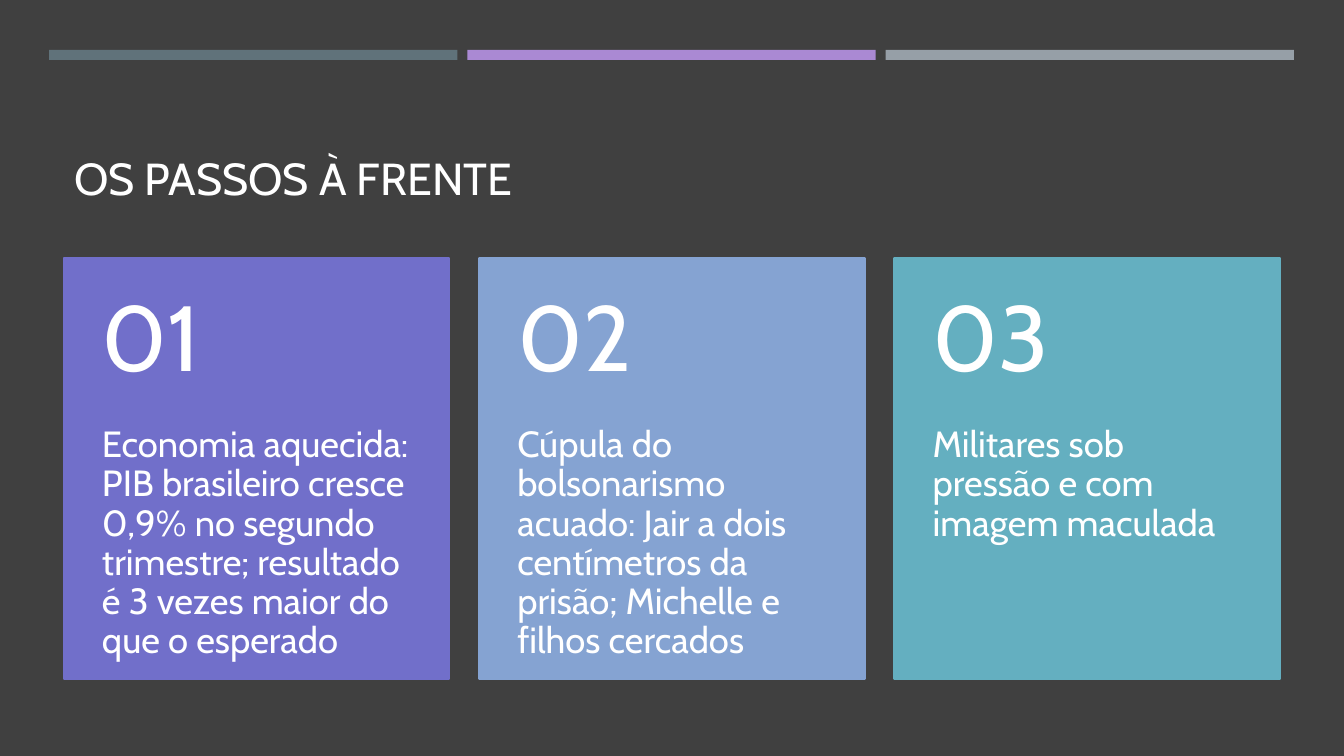
from dataclasses import dataclass

from pptx import Presentation
from pptx.dml.color import RGBColor
from pptx.enum import shapes, text
from pptx.util import Pt

EMU_PER_PX = 9144000 / 1008
SLIDE_W, SLIDE_H = 1344, 756


@dataclass(frozen=True)
class Theme:
    font: str = "Cabin"
    base: str = "000000"
    backdrop: str = "404040"
    ink: str = "FFFFFF"
    bars: tuple = ("60727A", "AA89D3", "969FA7")
    cards: tuple = ("716FCA", "85A3D2", "64AFC0")
    title_pt: int = 32
    number_pt: int = 66
    body_pt: int = 26
    outline_pt: float = 1.75


THEME = Theme()
TITLE = "OS PASSOS À FRENTE"
STEPS = (
    "Economia aquecida: PIB brasileiro cresce 0,9% no segundo trimestre; "
    "resultado é 3 vezes maior do que o esperado",
    "Cúpula do bolsonarismo acuado: Jair a dois centímetros da prisão; "
    "Michelle e filhos cercados",
    "Militares sob pressão e com imagem maculada",
)


def px(length):
    return round(length * EMU_PER_PX)


def columns(box, count, gap):
    """Split a box into equal columns separated by a gap."""
    left, top, width, height = box
    column_w = (width - gap * (count - 1)) / count
    return [(left + i * (column_w + gap), top, column_w, height) for i in range(count)]


def add_block(slide, box, color, outlined=False):
    block = slide.shapes.add_shape(shapes.MSO_SHAPE.RECTANGLE, *map(px, box))
    block.shadow.inherit = False
    block.fill.solid()
    block.fill.fore_color.rgb = RGBColor.from_string(color)
    if outlined:
        block.line.color.rgb = RGBColor.from_string(color)
        block.line.width = Pt(THEME.outline_pt)
    else:
        block.line.fill.background()


def add_text(slide, box, wording, size, anchor, insets, line_spacing=None):
    """Place one paragraph; insets run left, top, right, bottom."""
    frame = slide.shapes.add_textbox(*map(px, box)).text_frame
    frame.word_wrap = True
    frame.vertical_anchor = anchor
    (frame.margin_left, frame.margin_top,
     frame.margin_right, frame.margin_bottom) = map(px, insets)
    paragraph = frame.paragraphs[0]
    paragraph.text = wording
    paragraph.line_spacing = line_spacing
    paragraph.font.name = THEME.font
    paragraph.font.size = Pt(size)
    paragraph.font.color.rgb = RGBColor.from_string(THEME.ink)


def add_bars(slide, box):
    for bar_box, color in zip(columns(box, len(THEME.bars), gap=10), THEME.bars):
        add_block(slide, bar_box, color)


def add_card(slide, box, number, wording, color):
    left, top, width, height = box
    header_h = round(height * 0.4)
    add_block(slide, box, color, outlined=True)
    add_text(slide, (left, top + header_h, width, height - header_h), wording,
             THEME.body_pt, text.MSO_ANCHOR.TOP, (38, 0, 38, 36), 0.9)
    add_text(slide, (left, top, width, header_h), f"{number:02d}",
             THEME.number_pt, text.MSO_ANCHOR.MIDDLE, (38, 18, 38, 18), 0.9)


def add_cards(slide, box):
    card_boxes = columns(box, len(STEPS), gap=30)
    for number, (card_box, wording, color) in enumerate(
            zip(card_boxes, STEPS, THEME.cards), start=1):
        add_card(slide, card_box, number, wording, color)


def add_steps_slide(deck):
    slide = deck.slides.add_slide(deck.slide_layouts[6])
    slide.background.fill.solid()
    slide.background.fill.fore_color.rgb = RGBColor.from_string(THEME.base)
    add_block(slide, (0, 0, SLIDE_W, SLIDE_H), THEME.backdrop)
    add_text(slide, (64, 78, 1216, 131), TITLE, THEME.title_pt,
             text.MSO_ANCHOR.BOTTOM, (10, 5, 10, 5))
    add_bars(slide, (49, 50, 1245, 10))
    add_cards(slide, (64, 258, 1216, 421))


def main():
    deck = Presentation()
    deck.slide_width, deck.slide_height = px(SLIDE_W), px(SLIDE_H)
    add_steps_slide(deck)
    deck.save("out.pptx")


if __name__ == "__main__":
    main()
